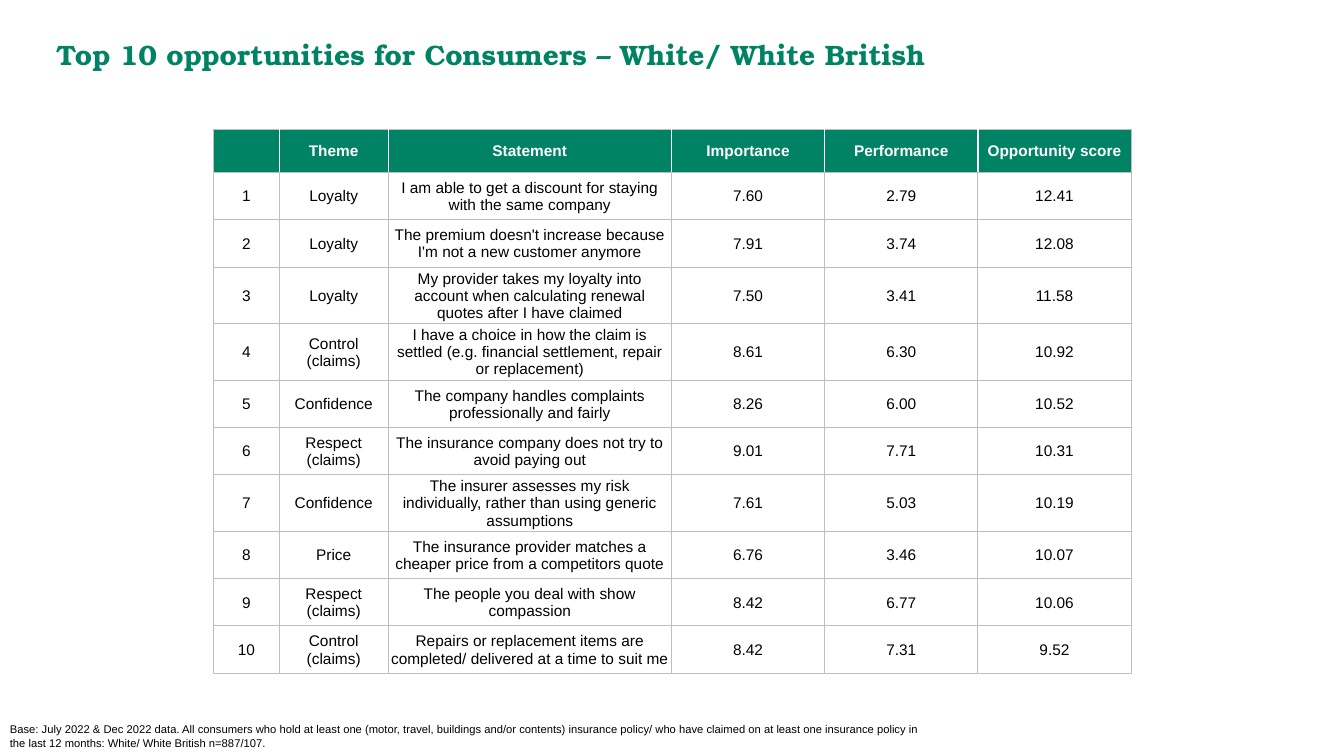
import pptx
import pptx.dml.color
import pptx.enum.text
import pptx.oxml
import pptx.oxml.ns
import pptx.util

Inches = pptx.util.Inches
Pt = pptx.util.Pt
ALIGN = pptx.enum.text.PP_ALIGN
ANCHOR = pptx.enum.text.MSO_ANCHOR
AUTO_SIZE = pptx.enum.text.MSO_AUTO_SIZE

GREEN, WHITE, BLACK, GREY = "008265", "FFFFFF", "000000", "BFBFBF"

HEADINGS = ["", "Theme", "Statement", "Importance", "Performance", "Opportunity score"]
OPPORTUNITIES = [
    ("Loyalty", "I am able to get a discount for staying with the same company",
     "7.60", "2.79", "12.41"),
    ("Loyalty", "The premium doesn't increase because I'm not a new customer anymore",
     "7.91", "3.74", "12.08"),
    ("Loyalty", "My provider takes my loyalty into account when calculating renewal "
     "quotes after I have claimed", "7.50", "3.41", "11.58"),
    ("Control (claims)", "I have a choice in how the claim is settled (e.g. financial "
     "settlement, repair or replacement)", "8.61", "6.30", "10.92"),
    ("Confidence", "The company handles complaints professionally and fairly",
     "8.26", "6.00", "10.52"),
    ("Respect (claims)", "The insurance company does not try to avoid paying out",
     "9.01", "7.71", "10.31"),
    ("Confidence", "The insurer assesses my risk individually, rather than using generic "
     "assumptions", "7.61", "5.03", "10.19"),
    ("Price", "The insurance provider matches a cheaper price from a competitors quote",
     "6.76", "3.46", "10.07"),
    ("Respect (claims)", "The people you deal with show compassion",
     "8.42", "6.77", "10.06"),
    ("Control (claims)", "Repairs or replacement items are completed/ delivered at a time "
     "to suit me", "8.42", "7.31", "9.52"),
]
BASE_NOTE = (
    "Base: July 2022 & Dec 2022 data. All consumers who hold at least one (motor, travel, "
    "buildings and/or contents) insurance policy/ who have claimed on at least one insurance "
    "policy in the last 12 months: White/ White British n=887/107."
)


def color(hex_value):
    return pptx.dml.color.RGBColor.from_string(hex_value)


class SlideBuilder:
    """Holds the table style and the current slide."""

    column_widths = [0.65, 1.08, 2.81, 1.52, 1.52, 1.52]
    header_height, row_height = 0.43, 0.47
    cell_format = {
        "margin_left": Inches(0.01), "margin_top": Inches(0.01),
        "margin_right": Inches(0.01), "margin_bottom": 0,
        "vertical_anchor": ANCHOR.MIDDLE,
    }

    def __init__(self, slide):
        self.slide = slide

    def fill_paragraph(self, paragraph, text, font_color, **font_format):
        paragraph.text = text
        for name, value in font_format.items():
            setattr(paragraph.font, name, value)
        paragraph.font.color.rgb = color(font_color)

    def text(self, text, left, top, width, height, font_color, auto_size, **font_format):
        shape = self.slide.shapes.add_textbox(
            Inches(left), Inches(top), Inches(width), Inches(height))
        frame = shape.text_frame
        frame.word_wrap = True
        frame.auto_size = auto_size
        self.fill_paragraph(frame.paragraphs[0], text, font_color, **font_format)

    def border(self, cell, side, line_color, points):
        line = pptx.oxml.parse_xml(
            f'<a:ln{side} {pptx.oxml.ns.nsdecls("a")} w="{Pt(points)}">'
            f'<a:solidFill><a:srgbClr val="{line_color}"/></a:solidFill></a:ln{side}>')
        cell._tc.get_or_add_tcPr().append(line)

    def cell(self, cell, text, is_header, column):
        for name, value in self.cell_format.items():
            setattr(cell, name, value)
        paragraph = cell.text_frame.paragraphs[0]
        paragraph.alignment = ALIGN.CENTER
        self.fill_paragraph(paragraph, text, WHITE if is_header else BLACK,
                            name="Arial", size=Pt(11), bold=is_header)
        # White dividers between headings, grey lines elsewhere
        outer_column = {"L": 0, "R": len(HEADINGS) - 1}
        for side in "LRTB":
            divider = is_header and side in outer_column and column != outer_column[side]
            self.border(cell, side, *((WHITE, 1) if divider else (GREY, 0.75)))
        # The fill follows the borders in the cell properties
        if is_header:
            cell.fill.solid()
            cell.fill.fore_color.rgb = color(GREEN)
        else:
            cell.fill.background()

    def table(self, rows, left, top):
        height = self.header_height + self.row_height * (len(rows) - 1)
        table = self.slide.shapes.add_table(
            len(rows), len(self.column_widths), Inches(left), Inches(top),
            Inches(sum(self.column_widths)), Inches(height)).table
        table.horz_banding = False
        for column, width in zip(table.columns, self.column_widths):
            column.width = Inches(width)
        for row_index, values in enumerate(rows):
            is_header = row_index == 0
            table.rows[row_index].height = Inches(
                self.header_height if is_header else self.row_height)
            for column_index, value in enumerate(values):
                self.cell(table.cell(row_index, column_index), value, is_header, column_index)


def main():
    presentation = pptx.Presentation()
    presentation.slide_width = Inches(13.33)
    presentation.slide_height = Inches(7.5)
    builder = SlideBuilder(presentation.slides.add_slide(presentation.slide_layouts[6]))

    # Title
    builder.text("Top 10 opportunities for Consumers – White/ White British",
                 0.46, 0.32, 12.28, 0.44, GREEN, AUTO_SIZE.SHAPE_TO_FIT_TEXT,
                 name="TeX Gyre Bonum", size=Pt(20), bold=True)

    # Ranked opportunities
    ranked = [(str(rank), *row) for rank, row in enumerate(OPPORTUNITIES, 1)]
    builder.table([HEADINGS, *ranked], 2.12, 1.28)

    # Base note
    builder.text(BASE_NOTE, 0, 7.12, 9.23, 0.38, BLACK, AUTO_SIZE.NONE,
                 name="Arial", size=Pt(8))

    presentation.save("out.pptx")


if __name__ == "__main__":
    main()
